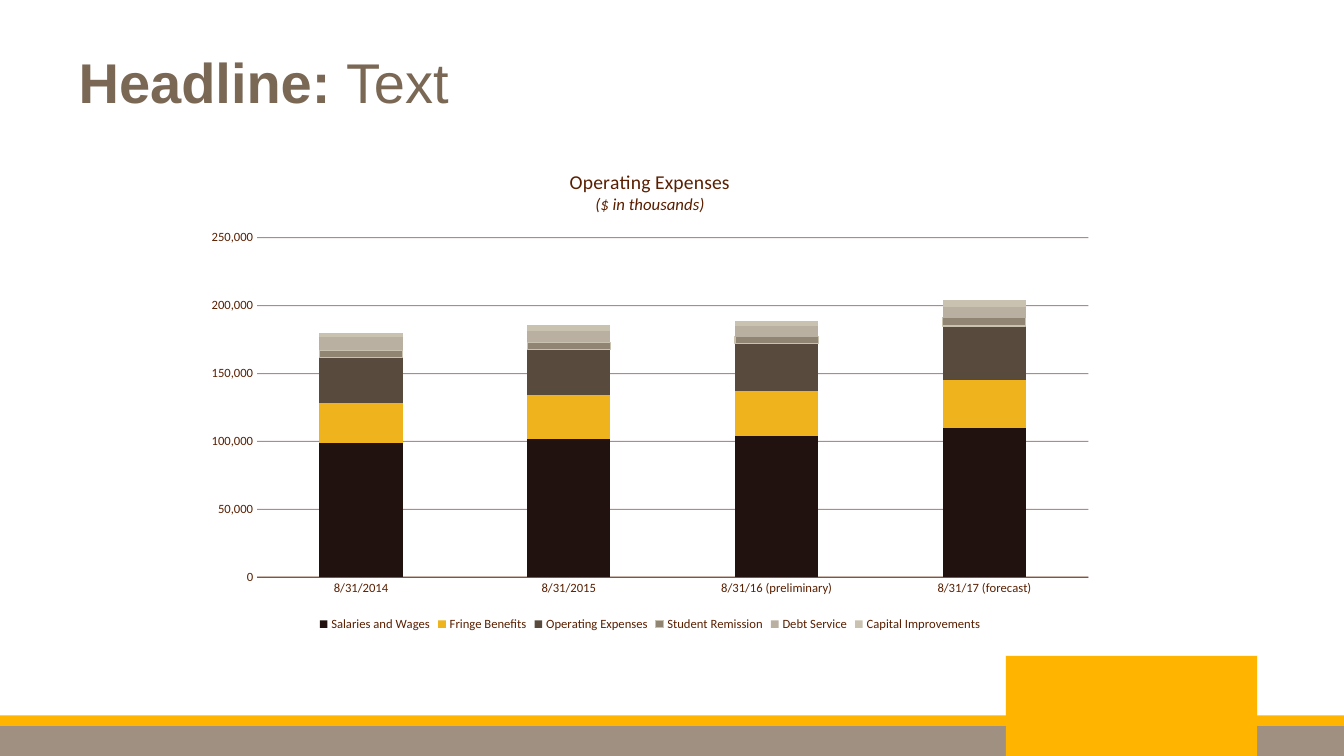
import pptx
import pptx.chart.data
import pptx.dml.color
import pptx.enum.chart
import pptx.enum.shapes
import pptx.enum.text
import pptx.oxml
import pptx.oxml.ns
import pptx.util

Pt = pptx.util.Pt
RGBColor = pptx.dml.color.RGBColor

GOLD = RGBColor(0xFF, 0xB5, 0x00)
TAUPE = RGBColor(0x9F, 0x90, 0x81)
HEADLINE_BROWN = RGBColor(0x7A, 0x68, 0x55)
CHART_BROWN = RGBColor(0x59, 0x1F, 0x00)
BLACK = RGBColor(0x00, 0x00, 0x00)
ESPRESSO = RGBColor(0x21, 0x12, 0x0F)
AMBER = RGBColor(0xEF, 0xB3, 0x1D)
UMBER = RGBColor(0x58, 0x4B, 0x3D)
STONE = RGBColor(0x90, 0x84, 0x72)
SAND = RGBColor(0xB9, 0xB0, 0xA1)
LIGHT_SAND = RGBColor(0xCA, 0xC2, 0xB0)


def style_font(font, name, size, color):
    font.name = name
    font.size = Pt(size)
    font.color.rgb = color


def style_half_transparent_line(line):
    line.width = Pt(0.75)
    line.color.rgb = CHART_BROWN
    color = line._ln.find(".//" + pptx.oxml.ns.qn("a:srgbClr"))
    color.append(pptx.oxml.parse_xml(
        f'<a:alpha {pptx.oxml.ns.nsdecls("a")} val="50000"/>'))


deck = pptx.Presentation()
deck.slide_width = Pt(960)
deck.slide_height = Pt(540)
page = deck.slides.add_slide(deck.slide_layouts[5])

# Footer bands
for left, top, width, height, color in (
    (0, 518, 960, 22, TAUPE),
    (0, 511, 960, 7.5, GOLD),
    (718.5, 468.5, 179.5, 71.5, GOLD),
):
    band = page.shapes.add_shape(
        pptx.enum.shapes.MSO_SHAPE.RECTANGLE,
        Pt(left), Pt(top), Pt(width), Pt(height))
    band.shadow.inherit = False
    band.fill.solid()
    band.fill.fore_color.rgb = color
    band.line.fill.background()

# Operating expenses chart
data = pptx.chart.data.CategoryChartData(number_format="#,##0")
data.categories = ["8/31/2014", "8/31/2015",
                   "8/31/16 (preliminary)", "8/31/17 (forecast)"]
expenses = (
    ("Salaries and Wages", (99000, 102000, 104000, 110000), ESPRESSO),
    ("Fringe Benefits", (29000, 32000, 33000, 35000), AMBER),
    ("Operating Expenses", (34000, 34000, 35000, 40000), UMBER),
    ("Student Remission", (5000, 5000, 5000, 6000), STONE),
    ("Debt Service", (10000, 8000, 8000, 8000), SAND),
    ("Capital Improvements", (3000, 5000, 4000, 5000), LIGHT_SAND),
)
for name, values, color in expenses:
    data.add_series(name, values)
chart = page.shapes.add_chart(
    pptx.enum.chart.XL_CHART_TYPE.COLUMN_STACKED,
    Pt(138), Pt(107.5), Pt(652.5), Pt(346.5), data).chart
style_font(chart.font, "Calibri", 10, BLACK)

plot = chart.plots[0]
plot.gap_width = 150
plot.overlap = 100
plot.vary_by_categories = False
for series, (name, values, color) in zip(plot.series, expenses):
    series.format.fill.solid()
    series.format.fill.fore_color.rgb = color
    if name == "Student Remission":
        series.format.line.color.rgb = LIGHT_SAND
        series.format.line.width = Pt(0.75)

title_frame = chart.chart_title.text_frame
title_frame.text = "Operating Expenses"
title_frame.add_paragraph().text = "($ in thousands)"
for para, size, italic in zip(title_frame.paragraphs, (14, 12), (False, True)):
    font = para.runs[0].font
    style_font(font, "Calibri", size, CHART_BROWN)
    font.bold = False
    font.italic = italic
chart.chart_title.include_in_layout = False

for axis in (chart.category_axis, chart.value_axis):
    axis.major_tick_mark = pptx.enum.chart.XL_TICK_MARK.NONE
    axis.minor_tick_mark = pptx.enum.chart.XL_TICK_MARK.NONE
    style_font(axis.tick_labels.font, "Calibri", 9, CHART_BROWN)
style_half_transparent_line(chart.category_axis.format.line)
values_axis = chart.value_axis
values_axis.format.line.fill.background()
values_axis.minimum_scale = 0
values_axis.maximum_scale = 250000
values_axis.major_unit = 50000
values_axis.tick_labels.number_format = "#,##0"
values_axis.tick_labels.number_format_is_linked = False
style_half_transparent_line(values_axis.major_gridlines.format.line)

chart.has_legend = True
chart.legend.position = pptx.enum.chart.XL_LEGEND_POSITION.BOTTOM
chart.legend.include_in_layout = False
style_font(chart.legend.font, "Calibri", 9, CHART_BROWN)

plot_area = chart._chartSpace.chart.plotArea
for old_layout in plot_area.findall(pptx.oxml.ns.qn("c:layout")):
    plot_area.remove(old_layout)
plot_area.insert(0, pptx.oxml.parse_xml(
    f'<c:layout {pptx.oxml.ns.nsdecls("c")}><c:manualLayout>'
    '<c:layoutTarget val="inner"/><c:xMode val="edge"/><c:yMode val="edge"/>'
    '<c:x val="0.07"/><c:y val="0.18"/><c:w val="0.91"/><c:h val="0.7"/>'
    '</c:manualLayout></c:layout>'))

# Headline
headline = page.shapes.title
headline.left, headline.top = Pt(49), Pt(39)
headline.width, headline.height = Pt(648), Pt(47)
frame = headline.text_frame
frame.word_wrap = True
frame.auto_size = pptx.enum.text.MSO_AUTO_SIZE.NONE
frame.vertical_anchor = pptx.enum.text.MSO_ANCHOR.MIDDLE
para = frame.paragraphs[0]
para.alignment = pptx.enum.text.PP_ALIGN.LEFT
para.line_spacing = 0.8
for text, bold in (("Headline: ", True), ("Text", False)):
    span = para.add_run()
    span.text = text
    style_font(span.font, "Arial", 40, HEADLINE_BROWN)
    span.font.bold = bold

deck.save("out.pptx")
